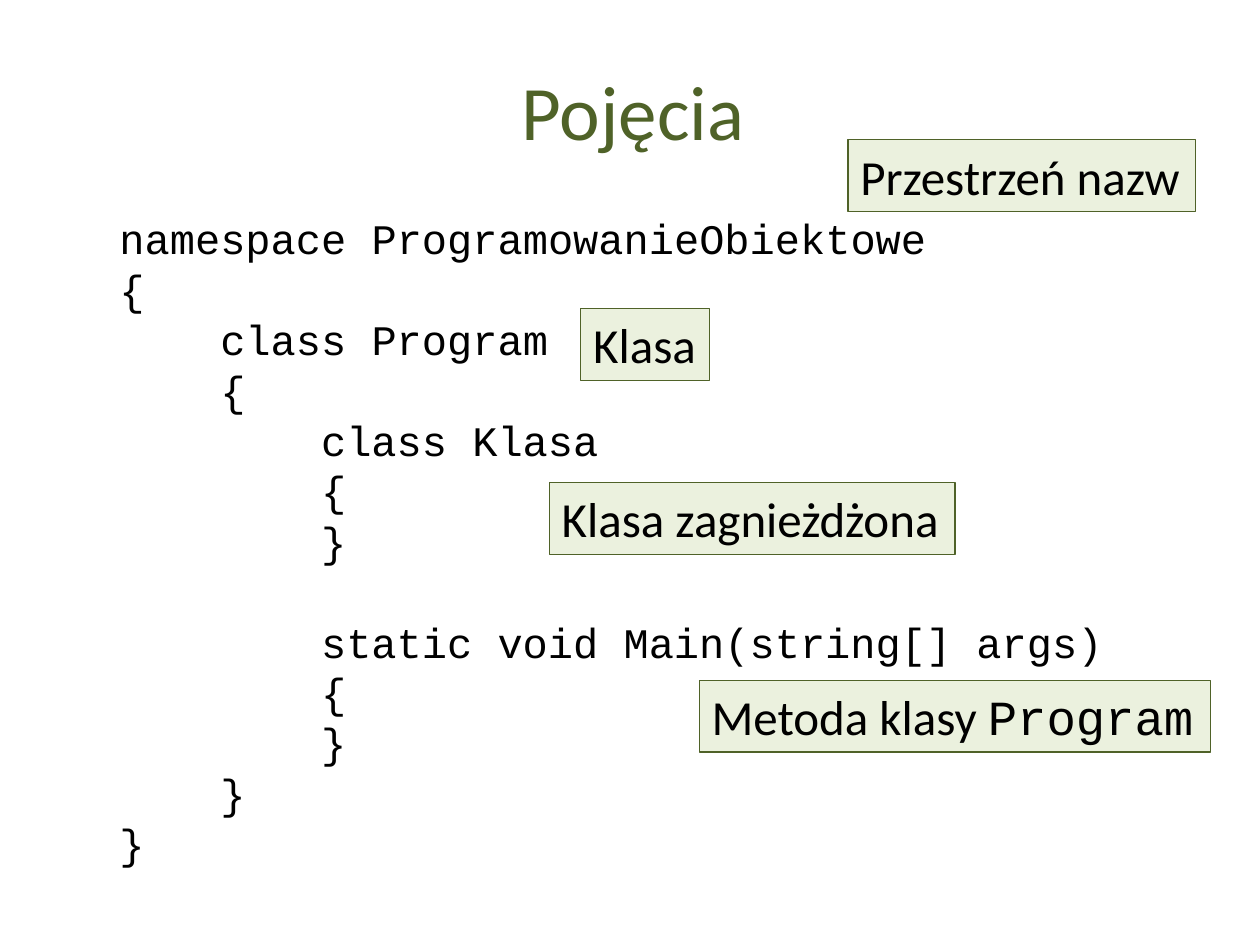
from dataclasses import dataclass
from pptx import Presentation
from pptx.dml.color import RGBColor as Rgb
from pptx.enum.shapes import MSO_SHAPE as Kind
from pptx.enum.text import MSO_ANCHOR as Anchor, MSO_AUTO_SIZE as Auto, PP_ALIGN as Align
from pptx.util import Inches, Pt


@dataclass(frozen=True)
class Theme:
    """Colours, fonts and type sizes of the slide."""
    green: Rgb = Rgb(0x4F, 0x62, 0x28)
    pale: Rgb = Rgb(0xEB, 0xF1, 0xDE)
    black: Rgb = Rgb(0, 0, 0)
    sans: str = "Calibri"
    mono: str = "Courier New"
    title: Pt = Pt(44)
    code: Pt = Pt(24)
    label: Pt = Pt(28)
    pitch: Pt = Pt(28.8)
    line: Pt = Pt(0.75)


THEME = Theme()
STEP = 0.8
CODE = [
    (0, "namespace ProgramowanieObiektowe"),
    (0, "{"),
    (1, "class Program"),
    (1, "{"),
    (2, "class Klasa"),
    (2, "{"),
    (2, "}"),
    (2, "static void Main(string[] args)"),
    (2, "{"),
    (2, "}"),
    (1, "}"),
    (0, "}"),
]
GAP = 7
LABELS = [
    (6.73, 1.11, 2.76, "Przestrzeń nazw", ""),
    (4.61, 2.45, 1.02, "Klasa", ""),
    (4.36, 3.83, 3.22, "Klasa zagnieżdżona", ""),
    (5.55, 5.4, 4.06, "Metoda klasy ", "Program"),
]


def style(run, face, size, color):
    """Set the font of a run."""
    font = run.font
    font.name, font.size, font.color.rgb = face, size, color


def add_title(slide, text):
    """Add the centred title."""
    box = slide.shapes.add_textbox(Inches(0.2), Inches(0.51), Inches(9.65), Inches(0.72))
    frame = box.text_frame
    frame.word_wrap = True
    frame.vertical_anchor = Anchor.MIDDLE
    frame.text = text
    para = frame.paragraphs[0]
    para.alignment = Align.CENTER
    style(para.runs[0], THEME.sans, THEME.title, THEME.green)


def add_code(slide, lines):
    """Add the code listing, indented by nesting level."""
    box = slide.shapes.add_textbox(Inches(0.85), Inches(1.64), Inches(8.06), Inches(5.35))
    frame = box.text_frame
    frame.word_wrap = True
    frame.text = "\n".join(text for _, text in lines)
    for para, (level, _) in zip(frame.paragraphs, lines):
        para.line_spacing = THEME.pitch
        para._p.get_or_add_pPr().set("marL", str(Inches(level * STEP)))
        style(para.runs[0], THEME.mono, THEME.code, THEME.black)
    frame.paragraphs[GAP].space_before = THEME.pitch


def add_label(slide, left, top, width, text, name):
    """Add a boxed label, with an optional code name at its end."""
    box = slide.shapes.add_shape(
        Kind.RECTANGLE, Inches(left), Inches(top), Inches(width), Inches(0.57))
    box.shadow.inherit = False
    box.fill.solid()
    box.fill.fore_color.rgb = THEME.pale
    box.line.color.rgb = THEME.green
    box.line.width = THEME.line
    frame = box.text_frame
    frame.word_wrap = False
    frame.auto_size = Auto.SHAPE_TO_FIT_TEXT
    frame.vertical_anchor = Anchor.TOP
    frame.text = text
    para = frame.paragraphs[0]
    para.alignment = Align.LEFT
    style(para.runs[0], THEME.sans, THEME.label, THEME.black)
    if name:
        run = para.add_run()
        run.text = name
        style(run, THEME.mono, THEME.label, THEME.black)


def main():
    """Build and save the slide."""
    deck = Presentation()
    deck.slide_width, deck.slide_height = Inches(10), Inches(7.5)
    slide = deck.slides.add_slide(deck.slide_layouts[6])
    add_title(slide, "Pojęcia")
    add_code(slide, CODE)
    for label in LABELS:
        add_label(slide, *label)
    deck.save("out.pptx")


if __name__ == "__main__":
    main()
